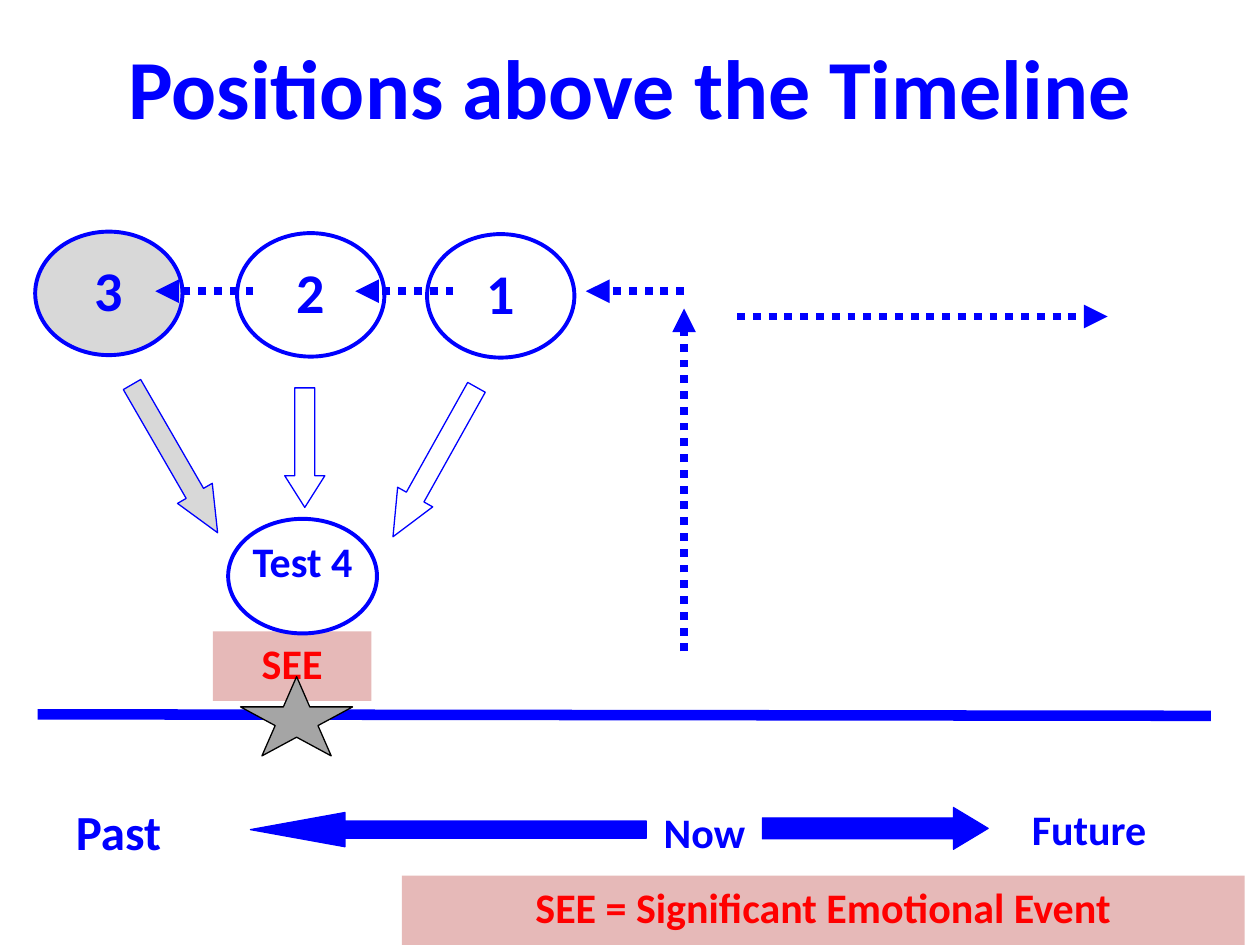
import pptx
import pptx.dml.color
import pptx.enum.dml
import pptx.enum.shapes
import pptx.enum.text
import pptx.oxml
import pptx.oxml.ns
import pptx.util

Cm, Pt = pptx.util.Cm, pptx.util.Pt
SHAPE = pptx.enum.shapes.MSO_SHAPE
ALIGN = pptx.enum.text.PP_ALIGN
ANCHOR = pptx.enum.text.MSO_ANCHOR

COLORS = {"blue": "0000FF", "red": "FF0000", "pink": "E6B9B8", "white": "FFFFFF",
          "light": "D8D8D8", "gray": "A5A5A5", "black": "000000"}
MARGINS = ("margin_left", "margin_top", "margin_right", "margin_bottom")
NO_MARGINS = dict.fromkeys(MARGINS, 0)

# Positions and sizes are in centimetres: left, top, width, height
TITLE = ("Positions above the Timeline", (1.27, 0.76, 22.86, 1.96))
EVENT = ("SEE", (4.29, 12.73, 3.2, 1.4))
LEGEND = ("SEE = Significant Emotional Event", (8.1, 17.65, 16.99, 1.4))
POSITION_SIZE = (2.97, 2.49)
POSITIONS = [("3", (0.71, 4.67), "light"), ("2", (4.78, 4.7), "white"),
             ("1", (8.61, 4.72), "white")]
TEST = ("Test 4", (4.6, 10.46, 3, 2.31))
TIMELINE = (0.76, 14.4, 24.41, 14.43)
STAR = (4.85, 13.64, 2.26, 1.6)
PERIODS = [  # text, box, size, alignment, frame format
    ("Past", (0, 16.03, 4.78, 1.27), 28, ALIGN.CENTER, {}),
    ("Now", (13.03, 16.26, 2.34, 1.04), 24, ALIGN.CENTER, NO_MARGINS),
    ("Future", (20.55, 16.08, 4.34, 1.24), 24, ALIGN.LEFT, {}),
]
BLOCK_ARROWS = [  # kind, box, head length ratio, fill, rotation
    (SHAPE.RIGHT_ARROW, (15.37, 16.28, 4.55, 0.84), 0.83, "blue", 0),
    (SHAPE.LEFT_ARROW, (5.05, 16.38, 7.98, 0.69), 2.76, "blue", 0),
    (SHAPE.DOWN_ARROW, (3.12, 7.52, 0.81, 3.45), 1.13, "light", 330),
    (SHAPE.DOWN_ARROW, (8.36, 7.59, 0.81, 3.45), 1.13, "white", 29.2),
    (SHAPE.DOWN_ARROW, (5.74, 7.82, 0.81, 2.41), 0.79, "white", 0),
]
STEP_Y, STEP_LENGTH = 5.87, 1.98
STEP_STARTS = [13.79, 9.14, 5.11]
DOTTED_PATHS = [
    (13.79, 13.13, 13.79, 6.22),
    *[(x, STEP_Y, x - STEP_LENGTH, STEP_Y) for x in STEP_STARTS],
    (14.86, 6.38, 22.33, 6.38),
]


def rgb(name):
    return pptx.dml.color.RGBColor.from_string(COLORS[name])


def write(shape, text, size, color="blue", align=ALIGN.CENTER, after=10, frame_format=None):
    frame = shape.text_frame
    settings = {"word_wrap": True, "vertical_anchor": ANCHOR.TOP, **(frame_format or {})}
    for key, value in settings.items():
        setattr(frame, key, value)
    paragraph = frame.paragraphs[0]
    paragraph.alignment = align
    paragraph.space_after = Pt(after)
    run = paragraph.add_run()
    run.text = text
    for key, value in {"name": "Calibri", "size": Pt(size), "bold": True}.items():
        setattr(run.font, key, value)
    run.font.color.rgb = rgb(color)


def add_shape(slide, kind, box, fill, line=None, width=0.75):
    shape = slide.shapes.add_shape(kind, *map(Cm, box))
    shape.shadow.inherit = False
    shape.fill.solid()
    shape.fill.fore_color.rgb = rgb(fill)
    if line:
        shape.line.color.rgb = rgb(line)
        shape.line.width = Pt(width)
    else:
        shape.line.fill.background()
    return shape


def add_line(slide, ends, width, dotted_arrow=False):
    connector = slide.shapes.add_connector(
        pptx.enum.shapes.MSO_CONNECTOR.STRAIGHT, *map(Cm, ends))
    connector.line.color.rgb = rgb("blue")
    connector.line.width = Pt(width)
    if dotted_arrow:
        connector.line.dash_style = pptx.enum.dml.MSO_LINE.ROUND_DOT
        outline = connector.line._get_or_add_ln()
        outline.append(pptx.oxml.parse_xml(
            f'<a:tailEnd {pptx.oxml.ns.nsdecls("a")} type="triangle"/>'))
    connector._element.spPr.append(
        pptx.oxml.parse_xml(f'<a:effectLst {pptx.oxml.ns.nsdecls("a")}/>'))


def main():
    deck = pptx.Presentation()
    deck.slide_width, deck.slide_height = Cm(25.4), Cm(19.05)
    slide = deck.slides.add_slide(deck.slide_layouts[6])

    text, box = TITLE
    title = slide.shapes.add_textbox(*map(Cm, box))
    write(title, text, 48, after=0, frame_format={"vertical_anchor": ANCHOR.MIDDLE})

    text, box = EVENT
    write(add_shape(slide, SHAPE.RECTANGLE, box, "pink"), text, 24, "red")

    for text, corner, fill in POSITIONS:
        position = add_shape(slide, SHAPE.OVAL, corner + POSITION_SIZE, fill, "blue", 2.25)
        write(position, text, 32)
    text, box = TEST
    test = add_shape(slide, SHAPE.OVAL, box, "white", "blue", 2.25)
    write(test, text, 24, frame_format=NO_MARGINS)

    add_line(slide, TIMELINE, 6)
    add_shape(slide, SHAPE.STAR_5_POINT, STAR, "gray", "black")

    for text, box, size, align, frame_format in PERIODS:
        period = add_shape(slide, SHAPE.RECTANGLE, box, "white")
        write(period, text, size, align=align, frame_format=frame_format)

    for kind, box, head, fill, rotation in BLOCK_ARROWS:
        arrow = add_shape(slide, kind, box, fill, "blue")
        arrow.adjustments[0], arrow.adjustments[1] = 0.5, head
        arrow.rotation = rotation

    for ends in DOTTED_PATHS:
        add_line(slide, ends, 4.5, dotted_arrow=True)

    text, box = LEGEND
    write(add_shape(slide, SHAPE.RECTANGLE, box, "pink"), text, 24, "red")

    deck.save("out.pptx")


if __name__ == "__main__":
    main()
